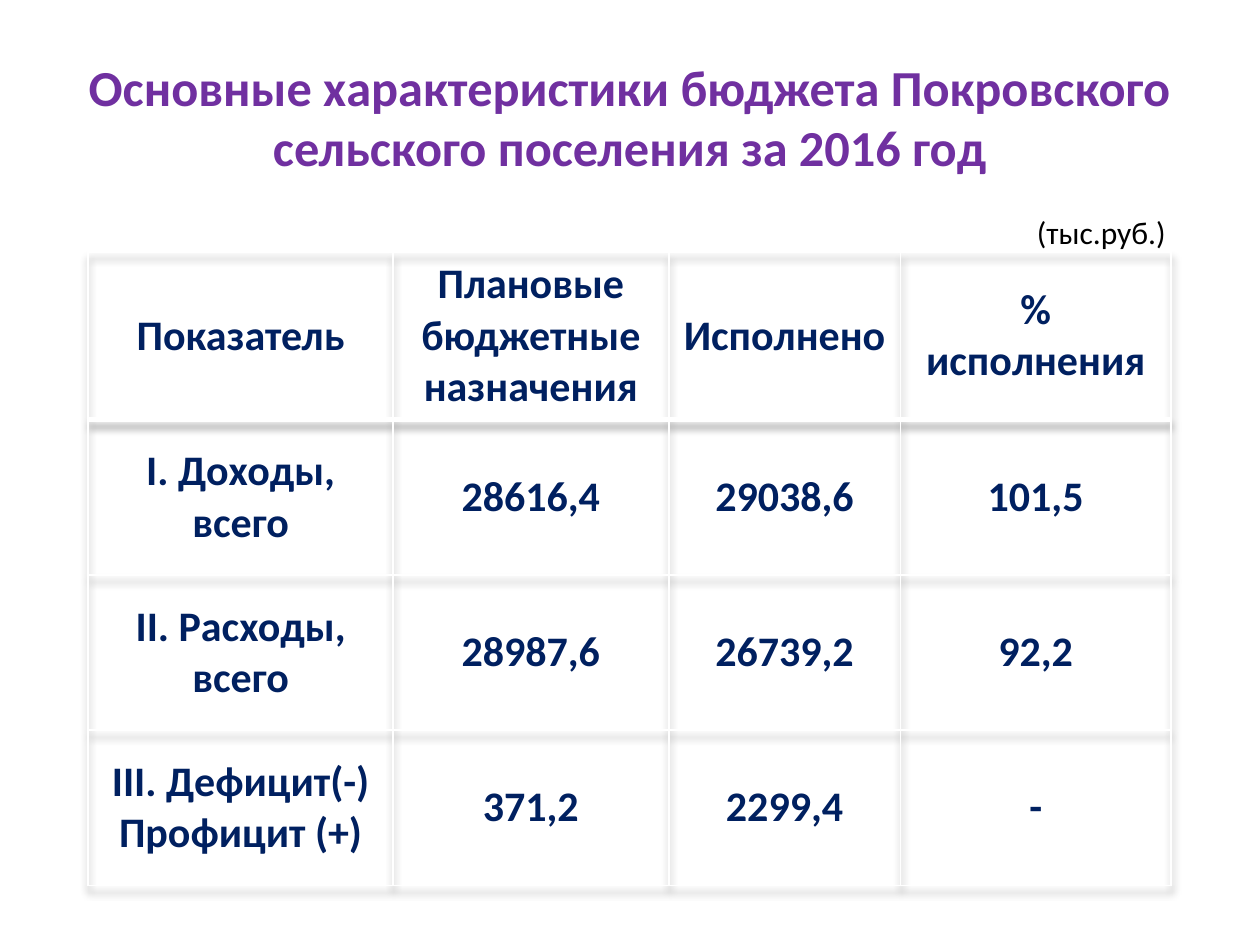
from lxml.etree import SubElement
from pptx import Presentation
from pptx.dml.color import RGBColor
from pptx.enum.text import MSO_ANCHOR as ANCHOR, PP_ALIGN as ALIGN
from pptx.oxml import parse_xml
from pptx.oxml.ns import nsdecls, qn
from pptx.util import Pt

TITLE = "Основные характеристики бюджета Покровского сельского поселения за 2016 год"
UNIT = "(тыс.руб.)"
ROWS = [
    ["Показатель", "Плановые бюджетные назначения", "Исполнено", "% исполнения"],
    ["I. Доходы, всего", "28616,4", "29038,6", "101,5"],
    ["II. Расходы, всего", "28987,6", "26739,2", "92,2"],
    ["III. Дефицит(-)\nПрофицит (+)", "371,2", "2299,4", "-"],
]
COL_WIDTHS = [174.2, 157.6, 132.4, 154.6]
ROW_HEIGHTS = [95.8, 88.7, 88.7, 88.7]
TITLE_FONT = dict(size=Pt(28.8), bold=True, color="7030A0")
UNIT_FONT = dict(size=Pt(18), bold=False, color="000000")
CELL_FONT = dict(size=Pt(24), bold=True, color="002060")
BORDER = "FFFFFF"
SHADOW = (
    f'<a:effectLst {nsdecls("a")}>'
    '<a:outerShdw blurRad="50800" dist="50800" dir="5400000" algn="ctr" rotWithShape="0">'
    '<a:srgbClr val="000000"><a:alpha val="40000"/></a:srgbClr>'
    '</a:outerShdw></a:effectLst>'
)


def rgb(value):
    return RGBColor.from_string(value)


def write(tf, text, style, align):
    tf.text = text
    for p in tf.paragraphs:
        p.alignment = align
        for r in p.runs:
            r.font.name = "Calibri"
            for name, value in style.items():
                if name == "color":
                    r.font.color.rgb = rgb(value)
                else:
                    setattr(r.font, name, value)


def add_text(s, text, box, style, align, **frame):
    tf = s.shapes.add_textbox(*map(Pt, box)).text_frame
    for name, value in frame.items():
        setattr(tf, name, value)
    write(tf, text, style, align)


def set_borders(cell, widths):
    tc_pr = cell._tc.get_or_add_tcPr()
    for i, (side, width) in enumerate(widths.items()):
        ln = SubElement(tc_pr, qn(f"a:ln{side}"), w=str(Pt(width)))
        fill = SubElement(ln, qn("a:solidFill"))
        SubElement(fill, qn("a:srgbClr"), val=BORDER)
        tc_pr.insert(i, ln)


def add_budget_table(s):
    frame = s.shapes.add_table(len(ROWS), len(COL_WIDTHS), Pt(50.4), Pt(144),
                               Pt(sum(COL_WIDTHS)), Pt(sum(ROW_HEIGHTS)))
    table = frame.table
    table.first_row = table.horz_banding = False
    table._tbl.tblPr.insert(0, parse_xml(SHADOW))
    for col, width in zip(table.columns, COL_WIDTHS):
        col.width = Pt(width)
    for i, (row, height) in enumerate(zip(table.rows, ROW_HEIGHTS)):
        row.height = Pt(height)
        widths = dict(L=1, R=1, T=3 if i == 1 else 1, B=3 if i == 0 else 1)
        for cell, text in zip(row.cells, ROWS[i]):
            cell.fill.background()
            cell.vertical_anchor = ANCHOR.MIDDLE
            set_borders(cell, widths)
            write(cell.text_frame, text, CELL_FONT, ALIGN.CENTER)


prs = Presentation()
prs.slide_width, prs.slide_height = Pt(720), Pt(540)
s = prs.slides.add_slide(prs.slide_layouts[6])
add_text(s, TITLE, (36, 21.6, 648, 90), TITLE_FONT, ALIGN.CENTER,
         word_wrap=True, vertical_anchor=ANCHOR.MIDDLE)
add_budget_table(s)
add_text(s, UNIT, (585.4, 118.1, 89.3, 28.8), UNIT_FONT, ALIGN.LEFT, word_wrap=False)
prs.save("out.pptx")
